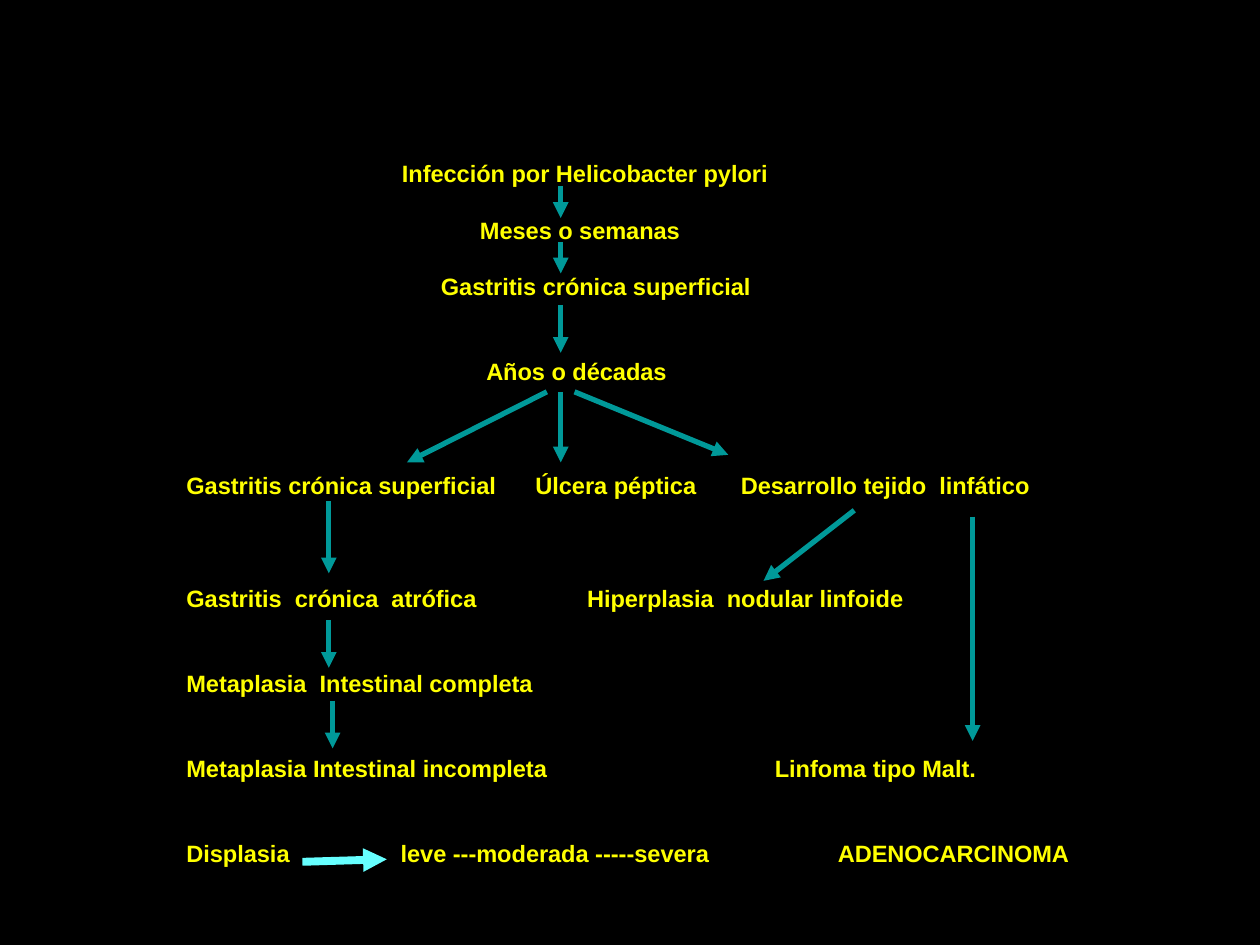
from typing import NamedTuple

from lxml.etree import SubElement
from pptx import Presentation
from pptx.dml.color import RGBColor
from pptx.enum.shapes import MSO_CONNECTOR as Connector
from pptx.oxml.ns import qn
from pptx.util import Inches, Pt

YELLOW, TEAL, CYAN = "FFFF00", "009999", "66FFFF"
FIRST_ROW, ROW_PITCH = 1.26, 0.225
LEFT = 1.48


class Stage(NamedTuple):
    row: int
    x: float
    width: float
    label: str


class Arrow(NamedTuple):
    x1: float
    y1: float
    x2: float
    y2: float
    color: str = TEAL
    width: float = 3


STAGES = [
    # Common course
    Stage(0, 3.19, 3, "Infección por Helicobacter pylori"),
    Stage(2, 3.81, 1.7, "Meses o semanas"),
    Stage(4, 3.5, 2.6, "Gastritis crónica superficial"),
    Stage(7, 3.86, 1.5, "Años o décadas"),
    # Three outcomes
    Stage(11, LEFT, 2.6, "Gastritis crónica superficial"),
    Stage(11, 4.25, 1.4, "Úlcera péptica"),
    Stage(11, 5.88, 2.4, "Desarrollo tejido  linfático"),
    # Later stages
    Stage(15, LEFT, 2.5, "Gastritis  crónica  atrófica"),
    Stage(15, 4.66, 2.6, "Hiperplasia  nodular linfoide"),
    Stage(18, LEFT, 2.9, "Metaplasia  Intestinal completa"),
    Stage(21, LEFT, 3, "Metaplasia Intestinal incompleta"),
    Stage(21, 6.15, 1.7, "Linfoma tipo Malt."),
    # Dysplasia and cancer
    Stage(24, LEFT, 0.9, "Displasia"),
    Stage(24, 3.18, 2.6, "leve ---moderada -----severa"),
    Stage(24, 6.65, 2, "ADENOCARCINOMA"),
]

ARROWS = [
    # Common course
    Arrow(4.45, 1.48, 4.45, 1.73),
    Arrow(4.45, 1.92, 4.45, 2.17),
    Arrow(4.45, 2.42, 4.45, 2.8),
    # Three outcomes
    Arrow(4.45, 3.11, 4.45, 3.67),
    Arrow(4.34, 3.11, 3.23, 3.67),
    Arrow(4.56, 3.11, 5.78, 3.61),
    # Gastritis to metaplasia
    Arrow(2.61, 3.98, 2.61, 4.55),
    Arrow(2.61, 4.92, 2.61, 5.3),
    Arrow(2.64, 5.56, 2.64, 5.94),
    # Lymphatic tissue
    Arrow(6.78, 4.05, 6.06, 4.61),
    Arrow(7.72, 4.1, 7.72, 5.88),
    # Degrees of dysplasia
    Arrow(2.4, 6.84, 3.07, 6.82, CYAN, 4.5),
]


def rgb(value: str) -> RGBColor:
    return RGBColor.from_string(value)


def add_stage(slide, stage: Stage) -> None:
    top = FIRST_ROW + stage.row * ROW_PITCH
    frame = slide.shapes.add_textbox(Inches(stage.x), Inches(top),
                                     Inches(stage.width), Inches(ROW_PITCH)).text_frame
    frame.word_wrap = True
    frame.margin_left = frame.margin_right = 0
    frame.margin_top = frame.margin_bottom = 0
    run = frame.paragraphs[0].add_run()
    run.text = stage.label
    run.font.name = "Arial"
    run.font.size = Pt(13.5)
    run.font.bold = True
    run.font.color.rgb = rgb(YELLOW)


def add_arrow(slide, arrow: Arrow) -> None:
    connector = slide.shapes.add_connector(
        Connector.STRAIGHT, Inches(arrow.x1), Inches(arrow.y1),
        Inches(arrow.x2), Inches(arrow.y2))
    connector.line.color.rgb = rgb(arrow.color)
    connector.line.width = Pt(arrow.width)
    SubElement(connector.line._get_or_add_ln(), qn("a:tailEnd"), type="triangle")
    SubElement(connector._element.spPr, qn("a:effectLst"))


def main() -> None:
    presentation = Presentation()
    presentation.slide_width = Inches(10)
    presentation.slide_height = Inches(7.5)
    slide = presentation.slides.add_slide(presentation.slide_layouts[6])
    background = slide.background.fill
    background.solid()
    background.fore_color.rgb = rgb("000000")

    for stage in STAGES:
        add_stage(slide, stage)
    for arrow in ARROWS:
        add_arrow(slide, arrow)

    presentation.save("out.pptx")


if __name__ == "__main__":
    main()
